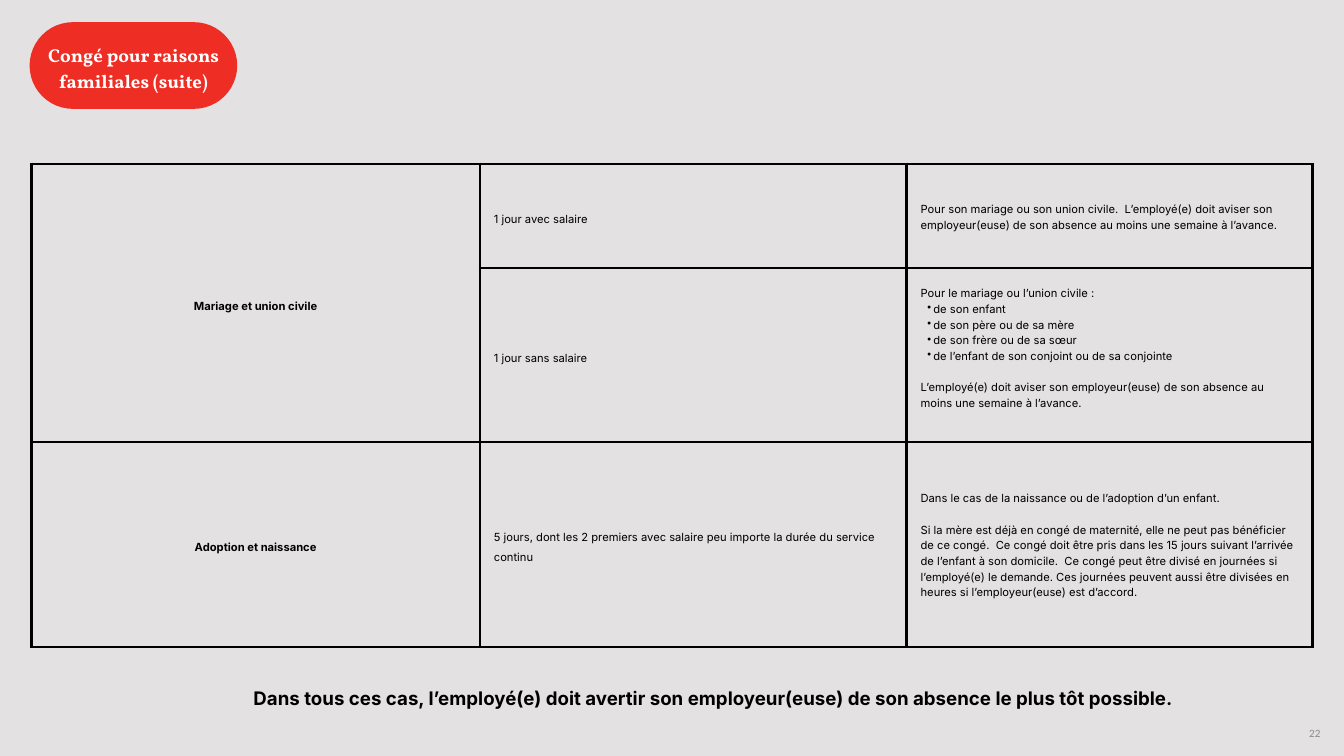
"""Build the slide on family leave: marriage, civil union, adoption and birth."""
from lxml import etree
from pptx import Presentation
from pptx.dml.color import RGBColor
from pptx.enum.shapes import MSO_SHAPE
from pptx.enum.text import MSO_ANCHOR, MSO_AUTO_SIZE, PP_ALIGN
from pptx.oxml.ns import qn
from pptx.util import Inches, Pt

PILL = MSO_SHAPE.ROUNDED_RECTANGLE
TOP, MIDDLE = MSO_ANCHOR.TOP, MSO_ANCHOR.MIDDLE
LEFT, CENTER, RIGHT = PP_ALIGN.LEFT, PP_ALIGN.CENTER, PP_ALIGN.RIGHT
BLACK = "000000"


def rgb(value):
    return RGBColor.from_string(value)


def style(paragraph, font, size, color, bold, align, spacing):
    paragraph.alignment = align
    paragraph.line_spacing = Pt(spacing)
    for run in paragraph.runs:
        run.font.name = font
        run.font.size = Pt(size)
        run.font.bold = bold
        run.font.color.rgb = rgb(color)


prs = Presentation()
prs.slide_width, prs.slide_height = Inches(20), Inches(11.25)
slide = prs.slides.add_slide(prs.slide_layouts[5])
slide.background.fill.solid()
slide.background.fill.fore_color.rgb = rgb("E3E1E1")

leave_rows = [
    [["Mariage et union civile"],
     ["1 jour avec salaire"],
     ["Pour son mariage ou son union civile.  L’employé(e) doit aviser son "
      "employeur(euse) de son absence au moins une semaine à l’avance."]],
    [[],
     ["1 jour sans salaire"],
     ["Pour le mariage ou l’union civile :",
      "•de son enfant",
      "•de son père ou de sa mère",
      "•de son frère ou de sa sœur",
      "•de l’enfant de son conjoint ou de sa conjointe",
      "L’employé(e) doit aviser son employeur(euse) de son absence au moins "
      "une semaine à l’avance."]],
    [["Adoption et naissance"],
     ["5 jours, dont les 2 premiers avec salaire peu importe la durée du service continu"],
     ["Dans le cas de la naissance ou de l’adoption d’un enfant.",
      "Si la mère est déjà en congé de maternité, elle ne peut pas bénéficier "
      "de ce congé.  Ce congé doit être pris dans les 15 jours suivant "
      "l’arrivée de l’enfant à son domicile.  Ce congé peut être divisé en "
      "journées si l’employé(e) le demande. Ces journées peuvent aussi être "
      "divisées en heures si l’employeur(euse) est d’accord."]],
]

leave_table = slide.shapes.add_table(
    3, 3, Inches(0.47), Inches(2.44), Inches(19.06), Inches(7.19)).table
leave_table.first_row = leave_table.horz_banding = False
for column, width in zip(leave_table.columns, (6.67, 6.35, 6.04)):
    column.width = Inches(width)
for row, height in zip(leave_table.rows, (1.55, 2.59, 3.05)):
    row.height = Inches(height)
leave_table.cell(0, 0).merge(leave_table.cell(1, 0))

for r, leave_row in enumerate(leave_rows):
    for c, texts in enumerate(leave_row):
        cell = leave_table.cell(r, c)
        cell.vertical_anchor = MIDDLE
        cell.margin_left = cell.margin_right = Inches(0.21)
        cell.margin_top = cell.margin_bottom = Inches(0.21)
        properties = cell._tc.get_or_add_tcPr()
        for side in ("a:lnL", "a:lnR", "a:lnT", "a:lnB"):
            border = etree.SubElement(properties, qn(side), w=str(Pt(3)))
            border_fill = etree.SubElement(border, qn("a:solidFill"))
            etree.SubElement(border_fill, qn("a:srgbClr"), val=BLACK)
        cell.fill.background()
        for i, text in enumerate(texts):
            frame = cell.text_frame
            paragraph = frame.paragraphs[0] if i == 0 else frame.add_paragraph()
            paragraph.text = text.lstrip("•")
            if text.startswith("•"):
                bullet_properties = paragraph._p.get_or_add_pPr()
                bullet_properties.set("marL", str(Inches(0.19)))
                bullet_properties.set("indent", str(Inches(-0.09)))
                etree.SubElement(bullet_properties, qn("a:buChar"), char="•")
            elif i > 0:
                paragraph.space_before = Pt(16.8)
            style(paragraph, "Inter", 12, BLACK, c == 0,
                  CENTER if c == 0 else LEFT, 16.8 if c == 2 else 21)
leave_table.cell(1, 2).margin_bottom = Inches(0.44)

title_pill = slide.shapes.add_shape(
    PILL, Inches(0.44), Inches(0.33), Inches(3.09), Inches(1.29))
title_pill.adjustments[0] = 0.5
title_pill.shadow.inherit = False
title_pill.fill.solid()
title_pill.fill.fore_color.rgb = rgb("EE2E24")
title_pill.line.fill.background()

title = slide.shapes.title
slide.shapes.element.append(title.element)
notice = slide.shapes.add_textbox(0, 0, 0, 0)
page_number = slide.shapes.add_textbox(0, 0, 0, 0)

for part, box, text, font, size, color, bold, align, spacing, anchor in (
    (title, (0.68, 0.59, 2.62, 0.75), "Congé pour raisons familiales (suite)",
     "Vollkorn", 20, "FFFFFF", True, CENTER, 28, TOP),
    (notice, (3.64, 10.2, 13.95, 0.34),
     "Dans tous ces cas, l’employé(e) doit avertir son employeur(euse) de son "
     "absence le plus tôt possible.",
     "Inter", 20, BLACK, True, CENTER, 26, TOP),
    (page_number, (17.42, 10.71, 2.23, 0.4), "22",
     "Calibri", 12, "8C8C8C", False, RIGHT, 14.4, MIDDLE),
):
    part.left, part.top, part.width, part.height = map(Inches, box)
    frame = part.text_frame
    frame.word_wrap = True
    frame.auto_size = MSO_AUTO_SIZE.NONE
    frame.vertical_anchor = anchor
    frame.margin_left = frame.margin_right = 0
    frame.margin_top = frame.margin_bottom = 0
    frame.text = text
    style(frame.paragraphs[0], font, size, color, bold, align, spacing)

prs.save("out.pptx")
